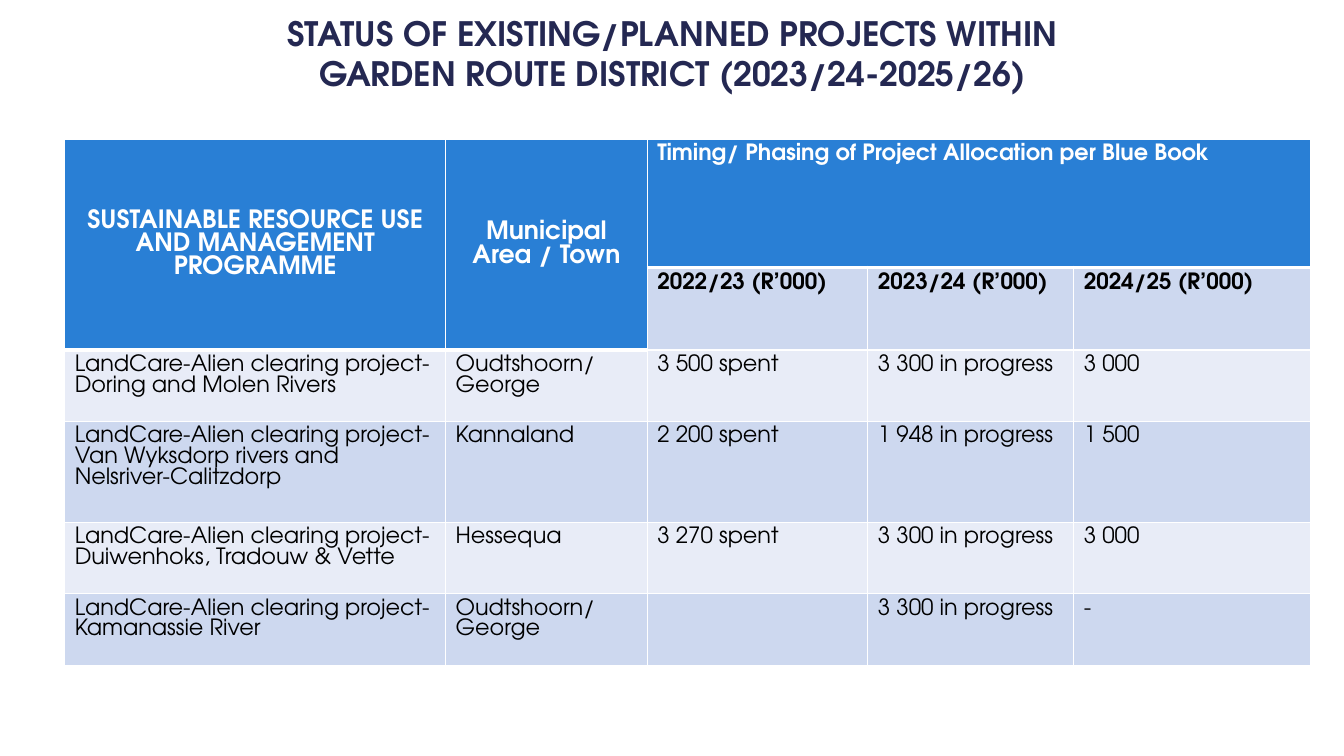
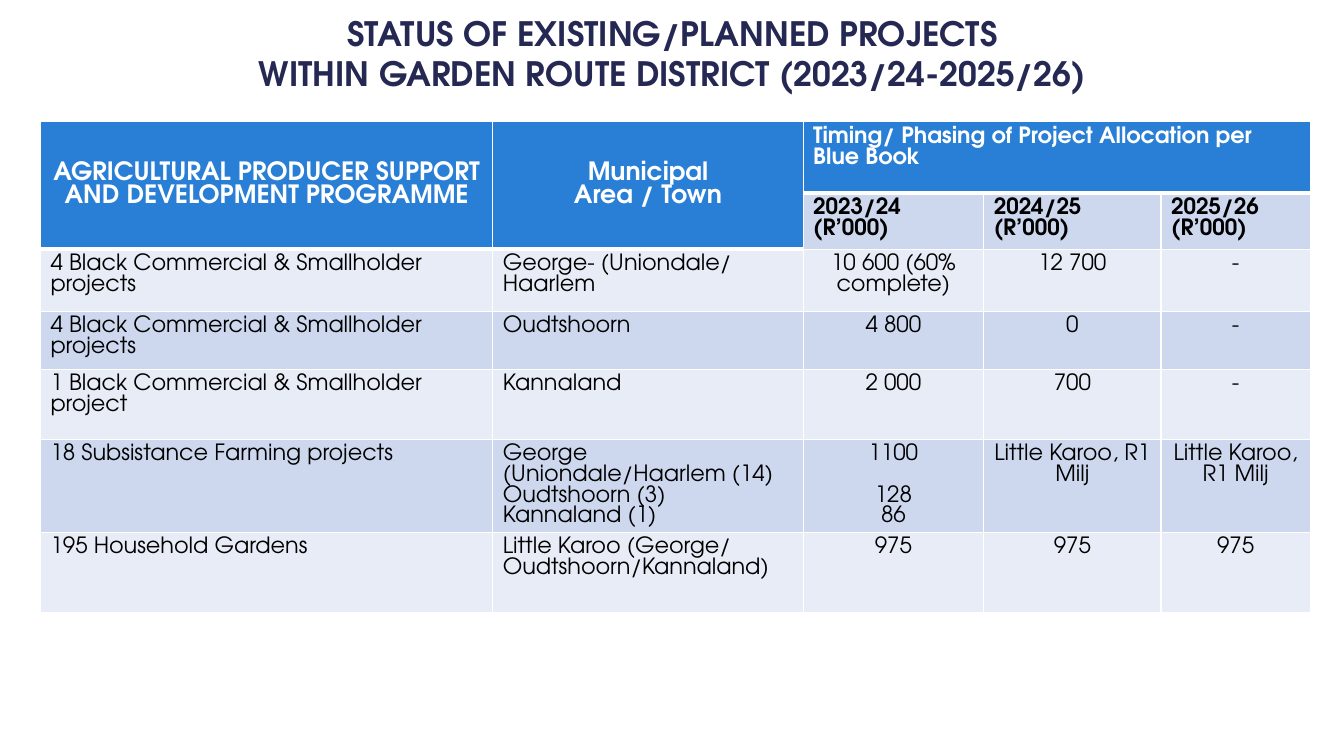
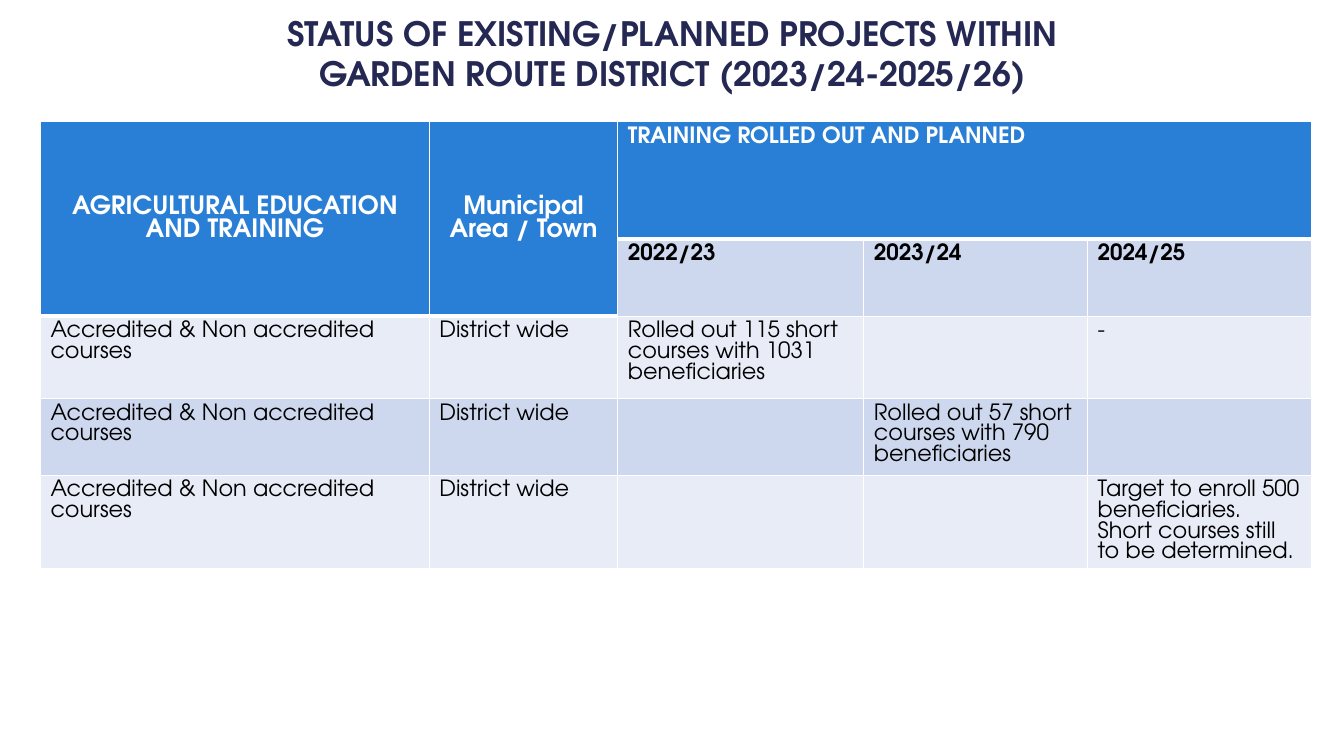
from lxml import etree
from pptx import Presentation
from pptx.dml.color import RGBColor
from pptx.enum.text import MSO_ANCHOR, MSO_AUTO_SIZE, PP_ALIGN
from pptx.oxml.ns import qn
from pptx.util import Cm, Pt

LEFT, CENTER = PP_ALIGN.LEFT, PP_ALIGN.CENTER
TOP, MIDDLE = MSO_ANCHOR.TOP, MSO_ANCHOR.MIDDLE
NO_AUTOFIT = MSO_AUTO_SIZE.NONE
TITLE_ONLY = 5

# Shared look
FONT = "TeX Gyre Adventor"
COLORS = {"navy": "242852", "blue": "297FD5", "band": "CDD8EF",
          "pale": "E8ECF7", "white": "FFFFFF", "black": "000000"}
STYLES = {
    "title": {"size": 24, "line": 28.6, "bold": True, "color": "navy"},
    "head": {"size": 18, "line": 16.5, "bold": True, "color": "white"},
    "group": {"size": 16, "line": 14.8, "bold": True, "color": "white"},
    "year": {"size": 16, "line": 14.8, "bold": True, "color": "black"},
    "body": {"size": 16, "line": 14.8, "bold": False, "color": "black"},
}
TITLE_BOX = {"left": Cm(1.02), "top": Cm(0.38), "width": Cm(31.85), "height": Cm(1.93)}
TITLE_MARGINS = ("margin_left", "margin_top", "margin_right", "margin_bottom")
THIN, THICK = Pt(1), Pt(3)

# Content: an empty line in a cell widens the gap before the next line
TITLE = "STATUS OF EXISTING/PLANNED PROJECTS WITHIN\vGARDEN ROUTE DISTRICT (2023/24-2025/26)"
AREA = "Municipal\nArea / Town"
TIMING = "Timing/ Phasing of Project Allocation per Blue Book"
COURSES = "Accredited & Non accredited courses"
SLIDES = [
    {
        "title": TITLE,
        "origin": (1.63, 3.51),
        "columns": (9.6, 5.08, 5.56, 5.19, 5.97),
        "heights": (3.23, 2.08, 1.8, 2.54, 1.8, 1.8),
        "value_align": LEFT,
        "programme": "SUSTAINABLE RESOURCE USE AND MANAGEMENT PROGRAMME",
        "group": TIMING,
        "years": ("2022/23 (R’000)", "2023/24 (R’000)", "2024/25 (R’000)"),
        "rows": [
            ("LandCare-Alien clearing project-Doring and Molen Rivers",
             "Oudtshoorn/ George", "3 500 spent", "3 300 in progress", "3 000"),
            ("LandCare-Alien clearing project-Van Wyksdorp rivers and Nelsriver-Calitzdorp",
             "Kannaland", "2 200 spent", "1 948 in progress", "1 500"),
            ("LandCare-Alien clearing project-Duiwenhoks, Tradouw & Vette",
             "Hessequa", "3 270 spent", "3 300 in progress", "3 000"),
            ("LandCare-Alien clearing project-Kamanassie River",
             "Oudtshoorn/ George", "", "3 300 in progress", "-"),
        ],
    },
    {
        "title": "STATUS OF EXISTING/PLANNED PROJECTS\v"
                 "WITHIN GARDEN ROUTE DISTRICT (2023/24-2025/26)",
        "origin": (1.02, 3.07),
        "columns": (11.4, 7.82, 4.55, 4.47, 3.76),
        "heights": (1.79, 1.42, 1.56, 1.47, 1.76, 2.34, 2.02),
        "value_align": CENTER,
        "programme": "AGRICULTURAL PRODUCER SUPPORT AND DEVELOPMENT PROGRAMME",
        "group": TIMING,
        "years": ("2023/24 (R’000)", "2024/25 (R’000)", "2025/26 (R’000)"),
        "rows": [
            ("4 Black Commercial & Smallholder projects",
             "George- (Uniondale/\nHaarlem", "10 600 (60% complete)", "12 700", "-"),
            ("4 Black Commercial & Smallholder projects", "Oudtshoorn", "4 800", "0", "-"),
            ("1 Black Commercial & Smallholder project", "Kannaland", "2 000", "700", "-"),
            ("18 Subsistance Farming projects",
             "George (Uniondale/Haarlem (14)\nOudtshoorn (3)\nKannaland (1)",
             "1100\n\n128\n86", "Little Karoo, R1 Milj", "Little Karoo, R1 Milj"),
            ("195 Household Gardens",
             "Little Karoo (George/\nOudtshoorn/Kannaland)", "975", "975", "975"),
        ],
    },
    {
        "title": TITLE,
        "origin": (1.02, 3.07),
        "columns": (9.8, 4.75, 6.2, 5.64, 5.64),
        "heights": (2.95, 1.95, 2.08, 1.93, 2.34),
        "value_align": LEFT,
        "programme": "AGRICULTURAL EDUCATION AND TRAINING",
        "group": "TRAINING ROLLED OUT AND PLANNED",
        "years": ("2022/23", "2023/24", "2024/25"),
        "rows": [
            (COURSES, "District wide",
             "Rolled out 115 short courses with 1031 beneficiaries", "", "-"),
            (COURSES, "District wide", "",
             "Rolled out 57 short courses with 790 beneficiaries", ""),
            (COURSES, "District wide", "", "",
             "Target to enroll 500 beneficiaries. Short courses still to be determined."),
        ],
    },
]


def format_paragraph(paragraph, style, align):
    paragraph.alignment = align
    paragraph.line_spacing = Pt(style["line"])
    for run in paragraph.runs:
        values = {"name": FONT, "size": Pt(style["size"]), "bold": style["bold"]}
        for name, value in values.items():
            setattr(run.font, name, value)
        run.font.color.rgb = RGBColor.from_string(COLORS[style["color"]])


def write_cell(cell, text, style, align=LEFT, anchor=TOP):
    cell.vertical_anchor = anchor
    frame = cell.text_frame
    paragraph, gap = frame.paragraphs[0], False
    for index, line in enumerate(text.split("\n")):
        if index and not line:
            gap = True
            continue
        if index:
            paragraph = frame.add_paragraph()
        paragraph.text = line
        format_paragraph(paragraph, style, align)
        if gap:
            paragraph.space_before = Pt(style["line"])
            gap = False


def paint_cell(cell, fill, bottom):
    properties = cell._tc.get_or_add_tcPr()
    for side, width in (("L", THIN), ("R", THIN), ("T", THIN), ("B", bottom)):
        line = etree.SubElement(properties, qn(f"a:ln{side}"), w=str(width))
        solid = etree.SubElement(line, qn("a:solidFill"))
        etree.SubElement(solid, qn("a:srgbClr"), val=COLORS["white"])
    cell.fill.solid()
    cell.fill.fore_color.rgb = RGBColor.from_string(COLORS[fill])


def add_title(slide, text):
    title = slide.shapes.title
    title.text_frame.text = text
    format_paragraph(title.text_frame.paragraphs[0], STYLES["title"], CENTER)
    title.text_frame.auto_size = NO_AUTOFIT
    title.text_frame.vertical_anchor = MIDDLE
    for margin in TITLE_MARGINS:
        setattr(title.text_frame, margin, Cm(0.2))


def add_project_table(slide, content):
    columns, heights = content["columns"], content["heights"]
    left, top = content["origin"]
    table = slide.shapes.add_table(
        len(heights), len(columns), Cm(left), Cm(top),
        Cm(sum(columns)), Cm(sum(heights))).table
    table.first_row = table.horz_banding = False
    for column, width in zip(table.columns, columns):
        column.width = Cm(width)
    for row, height in zip(table.rows, heights):
        row.height = Cm(height)

    # Fills and borders
    for row in range(len(heights)):
        for column in range(len(columns)):
            header = row == 0 or (row == 1 and column < 2)
            fill = "blue" if header else "band" if row % 2 else "pale"
            paint_cell(table.cell(row, column), fill, THICK if header else THIN)

    # Two-row header
    for column, text in enumerate((content["programme"], AREA)):
        table.cell(0, column).merge(table.cell(1, column))
        write_cell(table.cell(0, column), text, STYLES["head"], CENTER, MIDDLE)
    table.cell(0, 2).merge(table.cell(0, 4))
    write_cell(table.cell(0, 2), content["group"], STYLES["group"])
    for column, year in enumerate(content["years"], 2):
        write_cell(table.cell(1, column), year, STYLES["year"])

    # Projects
    for row, project in enumerate(content["rows"], 2):
        for column, text in enumerate(project):
            align = LEFT if column < 2 else content["value_align"]
            write_cell(table.cell(row, column), text, STYLES["body"], align)


def main():
    presentation = Presentation()
    presentation.slide_width, presentation.slide_height = Cm(33.87), Cm(19.05)
    layout = presentation.slide_layouts[TITLE_ONLY]
    for name, value in TITLE_BOX.items():
        setattr(layout.placeholders[0], name, value)
    for content in SLIDES:
        slide = presentation.slides.add_slide(layout)
        add_title(slide, content["title"])
        add_project_table(slide, content)
    presentation.save("out.pptx")


if __name__ == "__main__":
    main()
